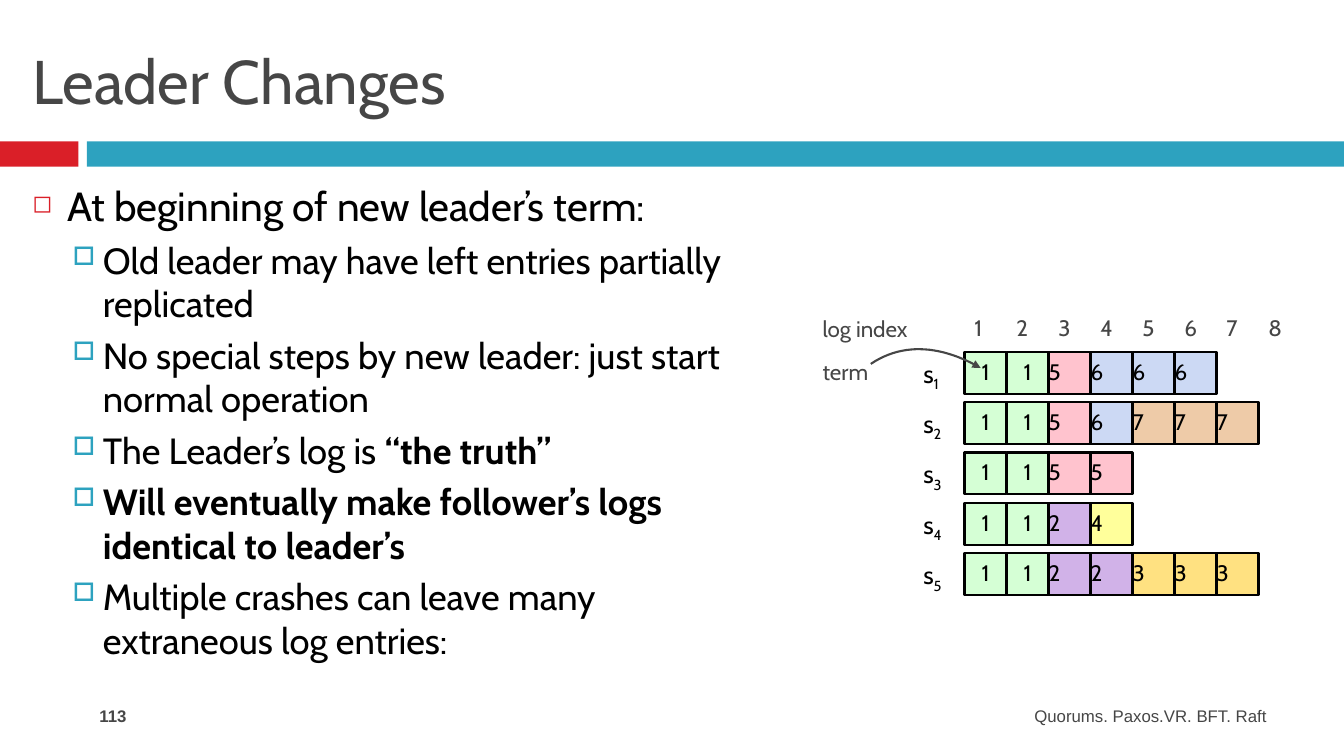
from lxml import etree
from pptx import Presentation
from pptx.dml.color import RGBColor
from pptx.enum.shapes import MSO_SHAPE
from pptx.enum.text import MSO_ANCHOR, PP_ALIGN
from pptx.oxml.ns import qn
from pptx.util import Pt

RECTANGLE = MSO_SHAPE.RECTANGLE
TOP, MIDDLE = MSO_ANCHOR.TOP, MSO_ANCHOR.MIDDLE
LEFT, CENTER, RIGHT = PP_ALIGN.LEFT, PP_ALIGN.CENTER, PP_ALIGN.RIGHT

COLORS = {"red": "DA1F28", "teal": "2DA2BF", "gray": "464646", "black": "000000"}
TERM_COLORS = {"1": "D5FFD5", "2": "D1B2E8", "3": "FFE181", "4": "FFFF9B",
               "5": "FFC3CE", "6": "CCD9F4", "7": "EECBA8"}
SERVER_LOGS = ["115666", "1156777", "1155", "1124", "1122333"]
LOG_LENGTH = 8
CELL, ROW_PITCH = 30, 36

# Each point is (outline level, [(text, bold), ...]).
POINTS = [
    (0, [("At beginning of new leader’s term:", False)]),
    (1, [("Old leader may have left entries partially replicated", False)]),
    (1, [("No special steps by new leader: just start normal operation", False)]),
    (1, [("The Leader’s log is ", False), ("“the truth”", True)]),
    (1, [("Will eventually make follower’s logs identical to leader’s", True)]),
    (1, [("Multiple crashes can leave many extraneous log entries:", False)]),
]
# Per level: size, space before, left margin, hanging indent, bullet, colour, percent
LEVELS = [
    (29, 7, 25.2, 25.2, "◻", "red", 60),
    (26, 5.5, 50.4, 21.6, "□", "teal", 70),
]


def rgb(hex_string):
    return RGBColor.from_string(hex_string)


def style_font(font, size, color, name="Cabin"):
    font.size = Pt(size)
    font.name = name
    font.color.rgb = rgb(COLORS[color])


def remove_insets(frame):
    frame.margin_left = frame.margin_right = 0
    frame.margin_top = frame.margin_bottom = 0


def add_text(slide, box, text, size, color="gray", font_name="Cabin",
             alignment=LEFT, anchor=TOP, inset=True):
    """Add a one-paragraph text box and return its paragraph."""
    frame = slide.shapes.add_textbox(*map(Pt, box)).text_frame
    frame.word_wrap = True
    frame.vertical_anchor = anchor
    if not inset:
        remove_insets(frame)
    paragraph = frame.paragraphs[0]
    paragraph.text = text
    paragraph.alignment = alignment
    style_font(paragraph.font, size, color, font_name)
    return paragraph


def add_rectangle(slide, box, fill):
    shape = slide.shapes.add_shape(RECTANGLE, *map(Pt, box))
    shape.shadow.inherit = False
    shape.fill.solid()
    shape.fill.fore_color.rgb = rgb(fill)
    shape.line.fill.background()
    return shape


def add_header(slide, left, top, width, height):
    """Title above a band split into a short red and a long teal part."""
    band_top, band_height, red_width, teal_left = top + 101, 18, 56, 62
    add_rectangle(slide, (left, band_top, red_width, band_height), COLORS["red"])
    add_rectangle(slide, (left + teal_left, band_top, width - teal_left, band_height),
                  COLORS["teal"])
    add_text(slide, (left + 16, top + 18, width - 32, height - 41),
             "Leader Changes", 44, anchor=MIDDLE)


def set_bullet(paragraph, margin, hanging, character, color, percent):
    properties = paragraph._p.get_or_add_pPr()
    properties.set("marL", str(Pt(margin)))
    properties.set("indent", str(-Pt(hanging)))
    bullet_color = etree.SubElement(properties, qn("a:buClr"))
    etree.SubElement(bullet_color, qn("a:srgbClr"), val=COLORS[color])
    etree.SubElement(properties, qn("a:buSzPct"), val=str(percent * 1000))
    etree.SubElement(properties, qn("a:buChar"), char=character)


def add_points(slide, left, top, width, height):
    frame = slide.shapes.add_textbox(*map(Pt, (left, top, width, height))).text_frame
    frame.word_wrap = True
    for index, (level, parts) in enumerate(POINTS):
        paragraph = frame.add_paragraph() if index else frame.paragraphs[0]
        size, space_before, *bullet = LEVELS[level]
        paragraph.level = level
        set_bullet(paragraph, *bullet)
        paragraph.space_before = Pt(space_before)
        style_font(paragraph.font, size, "black")
        for text, bold in parts:
            run = paragraph.add_run()
            run.text = text
            run.font.bold = bold


def add_log_cell(slide, left, top, term):
    shape = add_rectangle(slide, (left, top, CELL, CELL), TERM_COLORS[term])
    shape.line.color.rgb = rgb(COLORS["black"])
    shape.line.width = Pt(1.5)
    frame = shape.text_frame
    remove_insets(frame)
    frame.vertical_anchor = MIDDLE
    paragraph = frame.paragraphs[0]
    paragraph.text = term
    paragraph.alignment = CENTER if term == "1" else LEFT
    paragraph.line_spacing = Pt(17)
    style_font(paragraph.font, 16, "black")


def add_server_label(slide, left, top, number):
    paragraph = add_text(slide, (left, top, CELL, 29), "s", 18, "black", inset=False)
    subscript = paragraph.add_run()
    subscript.text = str(number)
    subscript._r.get_or_add_rPr().set("baseline", "-25000")


def add_curved_arrow(slide, start, control_1, control_2, end, steps=24):
    """Draw a cubic curve as a fine polyline with an arrowhead at its end."""
    def point_at(t):
        weights = ((1 - t) ** 3, 3 * t * (1 - t) ** 2, 3 * t ** 2 * (1 - t), t ** 3)
        corners = (start, control_1, control_2, end)
        return tuple(Pt(sum(w * corner[axis] for w, corner in zip(weights, corners)))
                     for axis in (0, 1))

    builder = slide.shapes.build_freeform(*point_at(0))
    builder.add_line_segments([point_at(i / steps) for i in range(1, steps + 1)],
                              close=False)
    arrow = builder.convert_to_shape()
    arrow.shadow.inherit = False
    arrow.fill.background()
    arrow.line.color.rgb = rgb(COLORS["gray"])
    arrow.line.width = Pt(1.5)
    etree.SubElement(arrow.line._get_or_add_ln(), qn("a:tailEnd"), type="triangle")


def add_log_diagram(slide, left, top):
    """Logs of all servers, one row each, under the numbered log index."""
    grid_left, grid_top = left + 101.5, top + 30
    for index in range(LOG_LENGTH):
        add_text(slide, (grid_left + index * CELL, top, CELL, 26.6), str(index + 1), 16)
    add_text(slide, (left, top + 3.6, 90, 19.4), "log index", 16, inset=False)
    add_text(slide, (left, top + 34.5, 60, 19.4), "term", 16, inset=False)
    for row, terms in enumerate(SERVER_LOGS):
        row_top = grid_top + row * ROW_PITCH
        add_server_label(slide, left + 72, row_top + 4.5, row + 1)
        for column, term in enumerate(terms):
            add_log_cell(slide, grid_left + column * CELL, row_top, term)
    add_curved_arrow(slide, (left + 34.5, top + 38.8), (left + 59, top + 22.3),
                     (left + 87, top + 26.6), (left + 113, top + 41.7))


def add_footer(slide, left, top, width, height):
    number = add_text(slide, (left, top, 208, height), "113", 12, font_name="Arial")
    number.font.bold = True
    add_text(slide, (left + width - 368, top, 368, height),
             "Quorums. Paxos.VR. BFT. Raft", 12, font_name="Arial", alignment=RIGHT)


def main():
    presentation = Presentation()
    presentation.slide_width, presentation.slide_height = Pt(960), Pt(540)
    slide = presentation.slides.add_slide(presentation.slide_layouts[6])
    add_header(slide, 0, 0, 960, 119)
    add_points(slide, 16, 126, 541.5, 402)
    add_footer(slide, 64, 500.5, 848, 29)
    add_log_diagram(slide, 587.5, 221.2)
    presentation.save("out.pptx")


if __name__ == "__main__":
    main()
